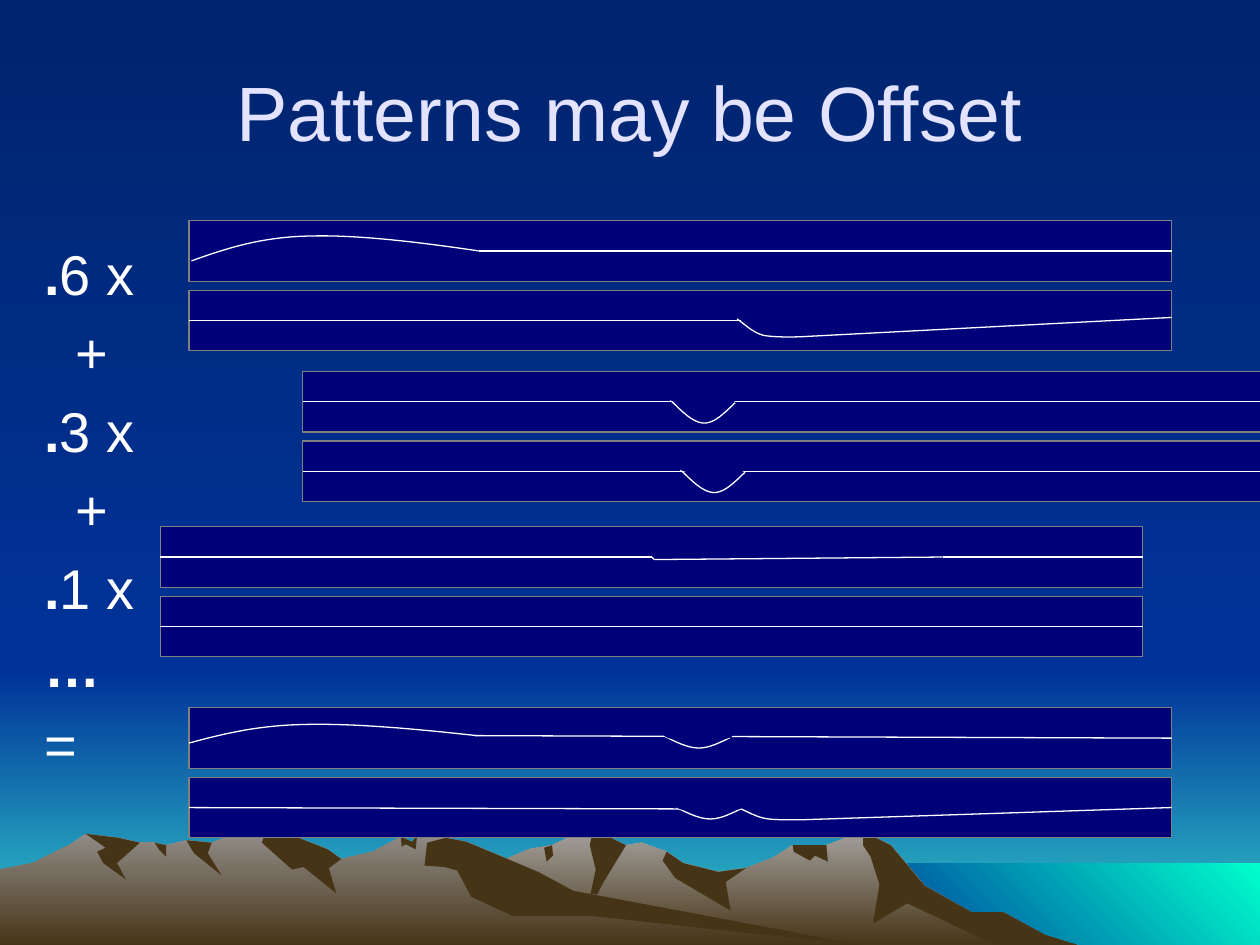
from pptx import Presentation, util as u
from pptx.dml.color import RGBColor
from pptx.enum import shapes, text
from pptx.oxml.ns import qn
from lxml import etree

THEME = {
    "font": "Arial", "title_size": 44, "body_size": 32, "line_width": 0.75,
    "title": "E3E3FF", "white": "FFFFFF", "strip": "000078", "border": "808080",
    "night": "00246D", "blue": "003399", "teal": "33CCCC", "sea": "00FFCC",
    "rock": "463416", "haze": "A5A29F", "mist": "938F8B",
}
SLIDE_W, SLIDE_H = 25.4, 19.05
HORIZON, GROUND = 13.54, 19.08
SEA_LEFT, SEA_TOP = 17.35, 17.4
DOWN, UP_RIGHT = 90, 315

TITLE = "Patterns may be Offset"
TITLE_BOX = {"left": 1.27, "top": 0.64, "width": 22.86, "height": 3.18}
TERMS_BOX = (0.64, 4.7, 22.86, 9.7)
PLUS_INDENT = 0.63
TERMS = [(".", "6 x"), ("", "+"), (".", "3 x"), ("", "+"), (".", "1 x"), ("…", ""), ("", "=")]

BANDS = [
    ((0, HORIZON, SLIDE_W, SLIDE_H - HORIZON), ("blue", "teal", DOWN)),
    ((0, 0, SLIDE_W, HORIZON), ("night", "blue", DOWN)),
    ((SEA_LEFT, SEA_TOP, SLIDE_W - SEA_LEFT, GROUND - SEA_TOP), ("blue", "sea", UP_RIGHT)),
]

# Each shadow: skyline from x to x, then its lower edge from right to left.
MOUNTAINS = [
    {"top": "haze",
     "skyline": [
         (6.55, 19.08), (7.04, 18.77), (8.31, 18.01), (10.01, 17.4), (10.67, 17.12),
         (11.13, 17.04), (11.81, 16.71), (11.96, 16.71), (12.62, 17.04), (12.93, 16.99),
         (13.44, 17.17), (13.77, 17.4), (14.48, 17.58), (15.04, 17.5), (15.57, 17.3),
         (15.98, 17.04), (16.66, 17.04), (17.4, 16.76), (17.96, 17.04), (18.64, 17.86),
         (19.58, 18.39), (20.22, 18.39), (21.06, 18.85), (21.79, 19.08)],
     "shadows": [
         (17.4, 21.79, [(20.12, 19.08), (18.29, 18.21), (17.6, 18.62), (17.73, 17.83),
                        (17.55, 17.27), (17.4, 17.04)]),
         (11.96, 12.62, [(12.45, 17.32), (12.17, 17.78), (11.81, 18.47), (12.01, 17.53),
                         (11.89, 17.04)]),
         (13.44, 15.04, [(14.63, 17.78), (14.73, 18.36), (13.61, 17.7), (13.36, 17.35)]),
         (15.98, 16.66, [(16.69, 17.37), (16.43, 17.25), (16.33, 17.35), (16, 17.17)]),
         (11.13, 11.13, [(11.15, 17.25), (11.02, 17.37), (10.97, 17.09)])]},
    {"top": "mist",
     "skyline": [
         (0, 17.53), (0.66, 17.4), (1.42, 17.02), (1.73, 16.81), (2.39, 16.89),
         (2.82, 16.99), (3.12, 16.99), (3.35, 17.04), (3.76, 16.94), (4.27, 16.99),
         (4.85, 16.76), (5.38, 16.71), (5.89, 16.84), (6.6, 17.12), (6.88, 17.32),
         (7.52, 17.17), (8.08, 16.87), (8.31, 16.97), (8.41, 16.84), (8.99, 16.89),
         (9.4, 16.97), (10.19, 17.3), (10.85, 17.58), (11.56, 17.96), (17.53, 19.08)],
     "shadows": [
         (5.38, 6.88, [(6.63, 17.5), (6.78, 18.01), (6.12, 17.48), (5.89, 17.53),
                       (5.28, 16.99)]),
         (8.99, 17.53, [(11.99, 18.47), (10.34, 18.47), (9.5, 18.08), (9.22, 17.55),
                        (8.97, 17.48), (8.56, 17.45), (8.61, 16.99)]),
         (8.08, 8.41, [(8.38, 17.12), (8.18, 17.02), (8.1, 17.07)]),
         (3.76, 4.27, [(4.19, 17.2), (4.47, 17.65), (3.91, 17.2)]),
         (3.12, 3.35, [(3.35, 17.27), (3.2, 17.12)]),
         (1.73, 2.82, [(2.36, 17.4), (2.54, 17.73), (2.08, 17.4), (1.96, 17.17),
                       (2.13, 17.09)])]},
]

STRIP_W, STRIP_H, STRIP_STEP = 19.81, 1.22, 1.4
MASK_W, MASK_H, MASK_RISE = 1.4, 0.28, 0.18
WAVES = {
    "swell": [(0, 0.2), (0.7, -0.05), (1.4, -0.28), (2.36, -0.3), (3.33, -0.33),
              (4.57, -0.18), (5.79, 0)],
    "dip": [(0, 0), (0.23, 0.23), (0.46, 0.46), (0.68, 0.46), (0.89, 0.46),
            (1.09, 0.25), (1.3, 0.05)],
    "tail": [(0, 0), (0.18, 0.13), (0.33, 0.28), (0.53, 0.33), (0.76, 0.38),
             (1.27, 0.36), (1.27, 0.36)],
}
FULL = [(0, 0), (STRIP_W, 0)]
PAIRS = [
    (3.81, 4.45, [
        {"flat": [(5.84, 0), (STRIP_W, 0)], "waves": [("swell", 0.05, 0, 1)]},
        {"flat": [(0, 0), (11.13, 0)], "waves": [("tail", 11.05, -0.03, 1)]}]),
    (6.1, 7.49, [
        {"flat": FULL, "waves": [("dip", 7.42, -0.03, 1)]},
        {"flat": FULL, "waves": [("dip", 7.62, -0.03, 1)]}]),
    (3.23, 10.62, [
        {"flat": [(0, 0), (9.91, 0), (9.96, 0.05), (15.77, 0), (STRIP_W, 0)], "waves": []},
        {"flat": FULL, "waves": []}]),
    (3.81, 14.27, [
        {"flat": [(5.77, -0.05), (STRIP_W, 0)],
         "waves": [("swell", 0, -0.05, 0.75), ("dip", 9.6, -0.03, 0.5)]},
        {"flat": [(0, 0), (11.13, 0.03)],
         "waves": [("dip", 9.83, 0, 0.5), ("tail", 11.13, 0.03, 0.6)]}]),
]


def rgb(name):
    return RGBColor.from_string(THEME[name])


def paint(fill, color):
    if color is None:
        fill.background()
    elif isinstance(color, str):
        fill.solid()
        fill.fore_color.rgb = rgb(color)
    else:
        first, last, angle = color
        fill.gradient()
        fill.gradient_angle = 360 - angle
        for stop, name in zip(fill.gradient_stops, (first, last)):
            stop.color.rgb = rgb(name)


def style(sp, fill=None, line=None):
    sp.shadow.inherit = False
    paint(sp.fill, fill)
    paint(sp.line.fill, line)
    if line:
        sp.line.width = u.Pt(THEME["line_width"])


def add_preset(s, kind, box, fill, line=None):
    style(s.shapes.add_shape(kind, *map(u.Cm, box)), fill, line)


def add_outline(s, points, fill=None, line=None):
    start, *rest = [(u.Cm(x), u.Cm(y)) for x, y in points]
    fb = s.shapes.build_freeform(*start)
    fb.add_line_segments(rest, close=fill is not None)
    style(fb.convert_to_shape(), fill, line)


def add_line(s, start, end):
    c = s.shapes.add_connector(shapes.MSO_CONNECTOR.STRAIGHT, *map(u.Cm, start + end))
    paint(c.line.fill, "white")
    c.line.width = u.Pt(THEME["line_width"])
    etree.SubElement(c._element.spPr, qn("a:effectLst"))


def bezier(points, steps=16):
    curve = points[:1]
    for i in range(0, len(points) - 1, 3):
        for k in range(1, steps + 1):
            t = k / steps
            weights = ((1 - t) ** 3, 3 * t * (1 - t) ** 2, 3 * t * t * (1 - t), t ** 3)
            curve.append(tuple(sum(w * q[axis] for w, q in zip(weights, points[i:i + 4]))
                               for axis in (0, 1)))
    return curve


def add_run(p, words, size, color, bold=False):
    r = p.add_run()
    r.text = words
    for key, value in {"name": THEME["font"], "size": u.Pt(THEME[size]), "bold": bold}.items():
        setattr(r.font, key, value)
    r.font.color.rgb = rgb(color)


def add_landscape(s):
    for box, fill in BANDS:
        add_preset(s, shapes.MSO_SHAPE.RECTANGLE, box, fill)
    for mountain in MOUNTAINS:
        skyline = mountain["skyline"]
        base = [(skyline[-1][0], GROUND), (skyline[0][0], GROUND)]
        add_outline(s, skyline + base, (mountain["top"], "rock", DOWN))
        for left, right, lower_edge in mountain["shadows"]:
            crest = [q for q in skyline if left <= q[0] <= right]
            add_outline(s, crest + lower_edge, "rock")


def add_terms(s):
    tf = s.shapes.add_textbox(*map(u.Cm, TERMS_BOX)).text_frame
    tf.word_wrap = True
    for i, (bold, plain) in enumerate(TERMS):
        p = tf.add_paragraph() if i else tf.paragraphs[0]
        p.space_before = u.Pt(0.2 * THEME["body_size"])
        if plain == "+":
            p._p.get_or_add_pPr().set("marL", str(u.Cm(PLUS_INDENT)))
        for words, is_bold in ((bold, True), (plain, False)):
            if words:
                add_run(p, words, "body_size", "white", is_bold)


def add_title(s):
    sp = s.shapes.title
    sp._element.getparent().append(sp._element)
    for key, value in TITLE_BOX.items():
        setattr(sp, key, u.Cm(value))
    sp.text_frame.vertical_anchor = text.MSO_ANCHOR.MIDDLE
    p = sp.text_frame.paragraphs[0]
    p.alignment = text.PP_ALIGN.CENTER
    add_run(p, TITLE, "title_size", "title")


def add_strip(s, left, top, flat, waves):
    middle = top + STRIP_H / 2
    add_preset(s, shapes.MSO_SHAPE.RECTANGLE, (left, top, STRIP_W, STRIP_H), "strip", "border")
    flat = [(left + x, middle + y) for x, y in flat]
    for start, end in zip(flat, flat[1:]):
        add_line(s, start, end)
    for name, dx, dy, scale in waves:
        x, y = left + dx, middle + dy
        curve = bezier([(x + px, y + py * scale) for px, py in WAVES[name]])
        if name == "tail":
            curve.append((left + STRIP_W, y - 0.03))
        add_outline(s, curve, line="white")
        if name == "dip":
            mask = (x - 0.03, y - MASK_RISE, MASK_W, MASK_H)
            add_preset(s, shapes.MSO_SHAPE.OVAL, mask, "strip")


def main():
    prs = Presentation()
    prs.slide_width, prs.slide_height = u.Cm(SLIDE_W), u.Cm(SLIDE_H)
    s = prs.slides.add_slide(prs.slide_layouts[5])
    paint(s.background.fill, ("night", "blue", DOWN))
    add_landscape(s)
    add_terms(s)
    add_title(s)
    for left, top, strips in PAIRS:
        for i, strip in enumerate(strips):
            add_strip(s, left, top + i * STRIP_STEP, **strip)
    prs.save("out.pptx")


if __name__ == "__main__":
    main()
